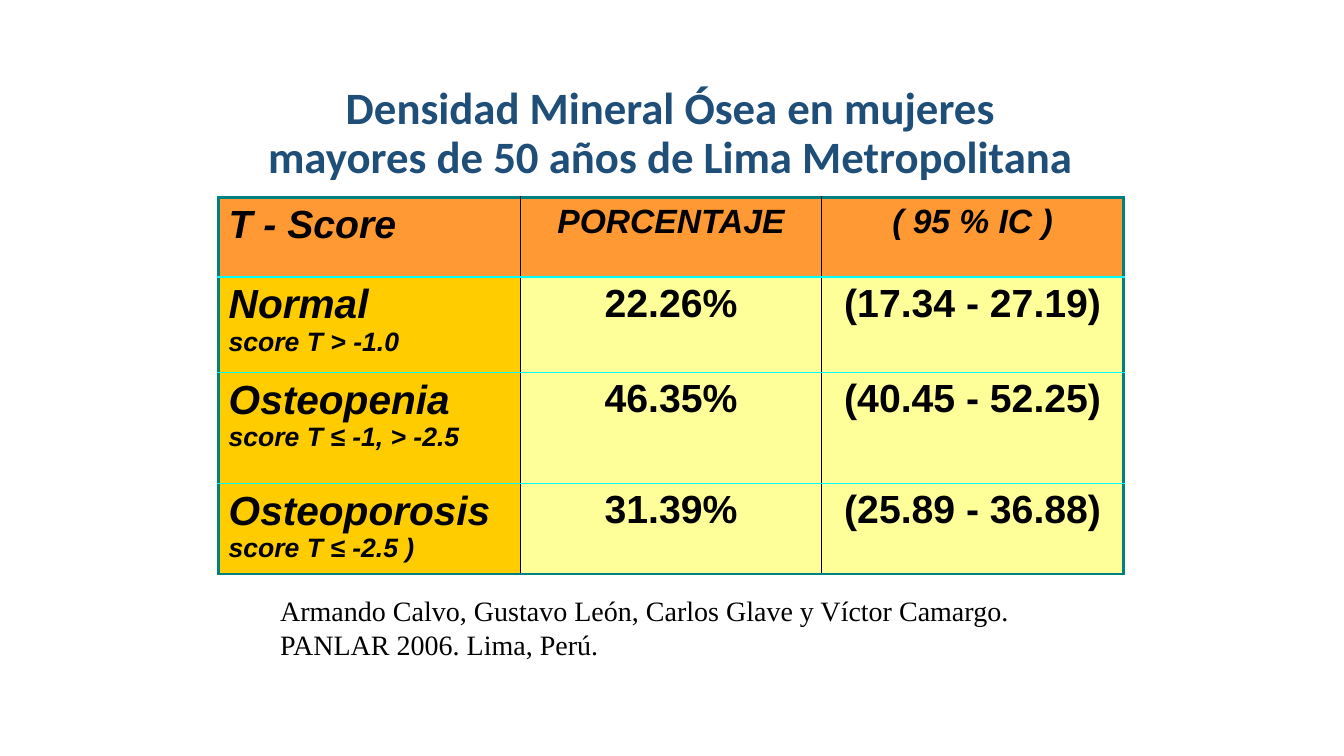
from dataclasses import dataclass

from lxml import etree
from pptx import Presentation
from pptx.dml.color import RGBColor
from pptx.enum.text import MSO_ANCHOR, MSO_AUTO_SIZE, PP_ALIGN
from pptx.oxml.ns import qn
from pptx.slide import Slide
from pptx.table import _Cell
from pptx.text.text import TextFrame
from pptx.util import Cm, Pt

LEFT, CENTER = PP_ALIGN.LEFT, PP_ALIGN.CENTER
MIDDLE = MSO_ANCHOR.MIDDLE
GROW = MSO_AUTO_SIZE.SHAPE_TO_FIT_TEXT
TITLE_ONLY = 5


@dataclass(frozen=True)
class Line:
    color: str
    width: float


@dataclass(frozen=True)
class Theme:
    title_font: str = "Calibri"
    table_font: str = "Arial"
    source_font: str = "Times New Roman"
    title_color: str = "1F4E79"
    ink: str = "000000"
    header_fill: str = "FF9933"
    label_fill: str = "FFCC00"
    value_fill: str = "FFFF99"
    title_size: int = 32
    label_size: int = 29
    value_size: int = 28
    header_size: int = 24
    source_size: int = 20
    range_size: int = 19
    frame: Line = Line("008080", 2)
    row_rule: Line = Line("00FFFF", 1)
    column_rule: Line = Line("000000", 0.75)


@dataclass(frozen=True)
class ScoreRow:
    label: str
    score_range: str
    percentage: str
    interval: str
    height: float


THEME = Theme()
COLUMN_WIDTH = 7.6
HEADERS = ("T - Score", "PORCENTAJE", "( 95 % IC )")
HEADER_HEIGHT = 2.0
ROWS = (
    ScoreRow("Normal", "score T > -1.0", "22.26%", "(17.34 - 27.19)", 2.4),
    ScoreRow("Osteopenia", "score T ≤ -1, > -2.5", "46.35%", "(40.45 - 52.25)", 2.8),
    ScoreRow("Osteoporosis", "score T ≤ -2.5 )", "31.39%", "(25.89 - 36.88)", 2.28),
)


def write(tf: TextFrame, text: str, *, size: float, font: str, color: str = THEME.ink,
          bold: bool = False, italic: bool = False, align: PP_ALIGN = LEFT,
          spacing: float = 1.0, hanging: float = 0, append: bool = False) -> None:
    """Write one formatted paragraph, the first one unless append is set."""
    p = tf.add_paragraph() if append else tf.paragraphs[0]
    p.alignment = align
    p.line_spacing = spacing
    if hanging:
        p_pr = p._p.get_or_add_pPr()
        p_pr.set("marL", str(Cm(hanging)))
        p_pr.set("indent", str(-Cm(hanging)))
    r = p.add_run()
    r.text = text
    r.font.name = font
    r.font.size = Pt(size)
    r.font.bold = bold
    r.font.italic = italic
    r.font.color.rgb = RGBColor.from_string(color)


def write_cell(cell: _Cell, text: str, size: float, *, italic: bool = True,
               align: PP_ALIGN = CENTER, append: bool = False) -> None:
    write(cell.text_frame, text, size=size, font=THEME.table_font, bold=True,
          italic=italic, align=align, hanging=0.97, append=append)


def add_borders(cell: _Cell, row: int, col: int) -> None:
    """Frame the outer edges and rule the inner ones; call before filling."""
    last_row, last_col = len(ROWS), len(HEADERS) - 1
    edges = {
        "a:lnL": THEME.frame if col == 0 else THEME.column_rule,
        "a:lnR": THEME.frame if col == last_col else THEME.column_rule,
        "a:lnT": THEME.frame if row == 0 else THEME.row_rule,
        "a:lnB": THEME.frame if row == last_row else THEME.row_rule,
    }
    tc_pr = cell._tc.get_or_add_tcPr()
    for tag, line in edges.items():
        ln = etree.SubElement(tc_pr, qn(tag), w=str(Pt(line.width)))
        fill = etree.SubElement(ln, qn("a:solidFill"))
        etree.SubElement(fill, qn("a:srgbClr"), val=line.color)


def add_title(s: Slide) -> None:
    sp = s.shapes.title
    sp.left, sp.top, sp.width, sp.height = Cm(6.4), Cm(1.8), Cm(21), Cm(3.18)
    tf = sp.text_frame
    tf.word_wrap = True
    tf.vertical_anchor = MIDDLE
    write(tf, "Densidad Mineral Ósea en mujeres mayores de 50 años de Lima Metropolitana",
          size=THEME.title_size, font=THEME.title_font, color=THEME.title_color,
          bold=True, align=CENTER, spacing=0.9)


def add_score_table(s: Slide) -> None:
    heights = [HEADER_HEIGHT] + [row.height for row in ROWS]
    table = s.shapes.add_table(len(heights), len(HEADERS), Cm(5.51), Cm(4.98),
                               Cm(COLUMN_WIDTH * len(HEADERS)), Cm(sum(heights))).table
    for column in table.columns:
        column.width = Cm(COLUMN_WIDTH)
    for i, height in enumerate(heights):
        table.rows[i].height = Cm(height)
        for j in range(len(HEADERS)):
            cell = table.cell(i, j)
            add_borders(cell, i, j)
            color = (THEME.header_fill if i == 0
                     else THEME.label_fill if j == 0 else THEME.value_fill)
            cell.fill.solid()
            cell.fill.fore_color.rgb = RGBColor.from_string(color)

    for j, header in enumerate(HEADERS):
        write_cell(table.cell(0, j), header,
                   THEME.header_size if j else THEME.value_size,
                   align=CENTER if j else LEFT)
    for i, row in enumerate(ROWS, start=1):
        label = table.cell(i, 0)
        write_cell(label, row.label, THEME.label_size, align=LEFT)
        write_cell(label, row.score_range, THEME.range_size, align=LEFT, append=True)
        for j, value in enumerate((row.percentage, row.interval), start=1):
            write_cell(table.cell(i, j), value, THEME.value_size, italic=False)


def add_source(s: Slide) -> None:
    tf = s.shapes.add_textbox(Cm(6.81), Cm(14.83), Cm(20.2), Cm(1.96)).text_frame
    tf.word_wrap = True
    tf.auto_size = GROW
    write(tf, "Armando Calvo, Gustavo León, Carlos Glave y Víctor Camargo. "
              "PANLAR 2006. Lima, Perú.",
          size=THEME.source_size, font=THEME.source_font)


def main() -> None:
    prs = Presentation()
    prs.slide_width, prs.slide_height = Cm(33.87), Cm(19.05)
    s = prs.slides.add_slide(prs.slide_layouts[TITLE_ONLY])
    add_title(s)
    add_score_table(s)
    add_source(s)
    prs.save("out.pptx")


if __name__ == "__main__":
    main()
